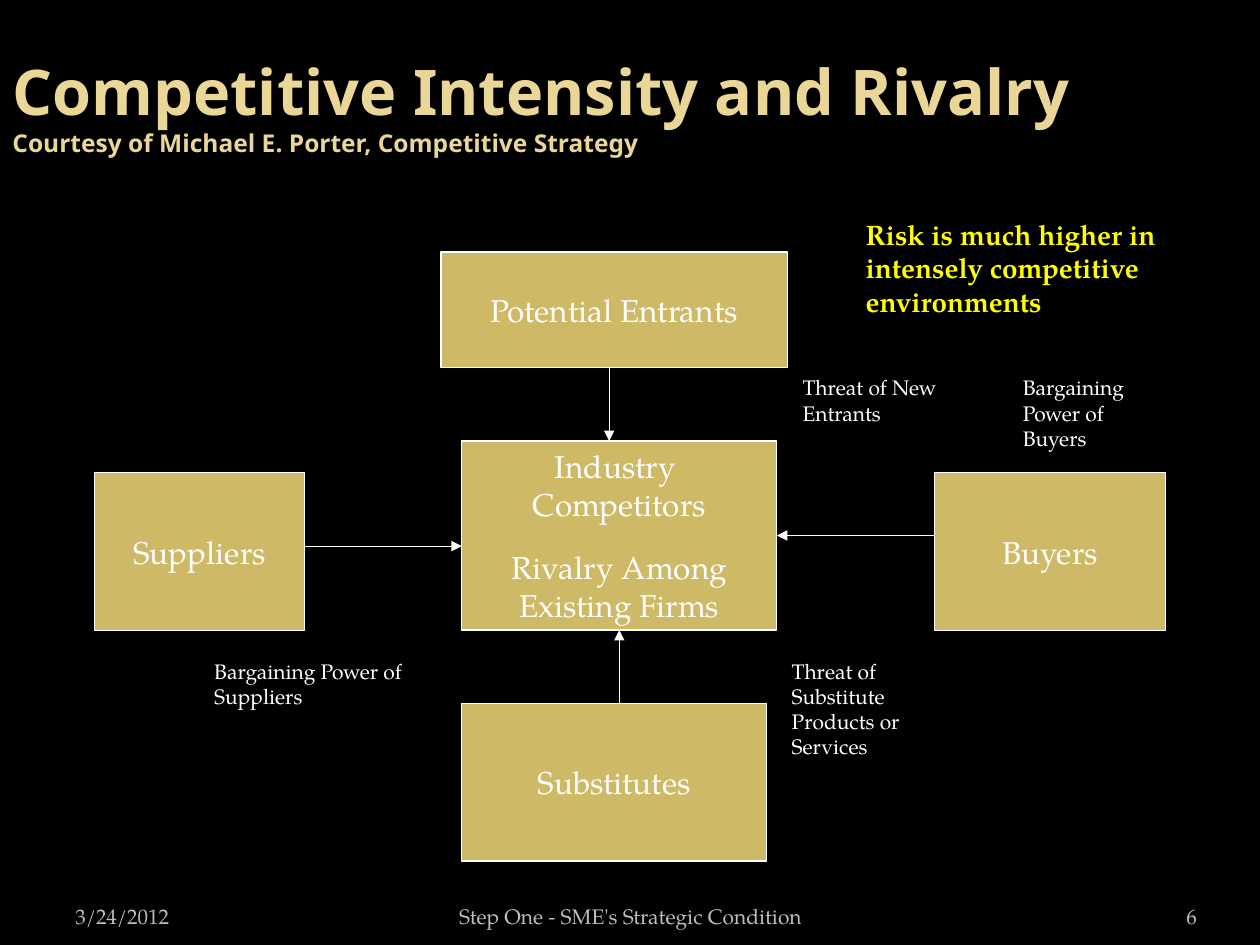
"""Build the competitive forces slide with its boxes, arrows and captions."""
from lxml import etree
from pptx import Presentation
from pptx.dml.color import RGBColor
from pptx.enum.shapes import MSO_CONNECTOR, MSO_SHAPE
from pptx.enum.text import MSO_ANCHOR, MSO_AUTO_SIZE, PP_ALIGN
from pptx.oxml.ns import qn
from pptx.util import Cm, Pt

BLACK = RGBColor(0x00, 0x00, 0x00)
WHITE = RGBColor(0xFF, 0xFF, 0xFF)
GREY = RGBColor(0xBD, 0xBD, 0xBD)
GOLD = RGBColor(0xCE, 0xB9, 0x66)
PALE_GOLD = RGBColor(0xEA, 0xD6, 0x96)
YELLOW = RGBColor(0xFF, 0xFF, 0x00)
HEADING_FONT, BODY_FONT = "Noto Sans", "TeX Gyre Pagella"
LEFT, CENTER, RIGHT = PP_ALIGN.LEFT, PP_ALIGN.CENTER, PP_ALIGN.RIGHT
TOP, MIDDLE, BOTTOM = MSO_ANCHOR.TOP, MSO_ANCHOR.MIDDLE, MSO_ANCHOR.BOTTOM
RECTANGLE, STRAIGHT = MSO_SHAPE.RECTANGLE, MSO_CONNECTOR.STRAIGHT
GROW = MSO_AUTO_SIZE.SHAPE_TO_FIT_TEXT
WIDE_INSETS = (0.3, 0.15)

TITLE = [
    ("Competitive Intensity and Rivalry", 36),
    ("Courtesy of Michael E. Porter, Competitive Strategy", 14),
]
FOOTERS = [
    ("3/24/2012", (1.27, 17.83, 5.92, 1.02), LEFT, (0.25, 0.13)),
    ("Step One - SME's Strategic Condition", (8.69, 17.83, 8.05, 1.02), CENTER, (0.25, 0.13)),
    ("6", (22.02, 17.83, 2.11, 1.02), RIGHT, (0, 0.13)),
]
FORCES = {
    "entrants": (["Potential Entrants"], (8.89, 5.08, 6.98, 2.33)),
    "substitutes": (["Substitutes"], (9.31, 14.18, 6.14, 3.18)),
    "suppliers": (["Suppliers"], (1.91, 9.53, 4.23, 3.18)),
    "buyers": (["Buyers"], (18.84, 9.53, 4.66, 3.18)),
    "rivalry": (
        ["Industry ", "Competitors", "Rivalry Among", "Existing Firms"],
        (9.31, 8.89, 6.35, 3.81),
    ),
}
GAP_BEFORE = {"Rivalry Among": 14.4}
CAPTIONS = [
    ("Bargaining Power of Suppliers", (4.02, 13.12, 4.87, 3.12), 12, WHITE, False),
    ("Bargaining Power of Buyers", (20.32, 7.41, 2.96, 1.85), 12, WHITE, False),
    ("Threat of New Entrants", (15.88, 7.41, 4.23, 1.32), 12, WHITE, False),
    ("Threat of Substitute Products or Services", (15.66, 13.12, 4.23, 1.32), 12, WHITE, False),
    ("Risk is much higher in intensely competitive environments",
     (17.15, 4.23, 7.2, 2.33), 16, YELLOW, True),
]


def write(frame, lines, font, color, bold, align):
    for index, (text, size) in enumerate(lines):
        paragraph = frame.paragraphs[0] if index == 0 else frame.add_paragraph()
        paragraph.alignment = align
        if text in GAP_BEFORE:
            paragraph.space_before = Pt(GAP_BEFORE[text])
        run = paragraph.add_run()
        run.text = text
        run.font.name, run.font.size, run.font.bold = font, Pt(size), bold
        run.font.color.rgb = color


def set_frame(frame, anchor, insets, wrap):
    frame.vertical_anchor, frame.word_wrap = anchor, wrap
    frame.margin_left = frame.margin_right = Cm(insets[0])
    frame.margin_top = frame.margin_bottom = Cm(insets[1])


def add_label(slide, text, place, size, color, bold, align, anchor, insets):
    frame = slide.shapes.add_textbox(*map(Cm, place)).text_frame
    set_frame(frame, anchor, insets, True)
    write(frame, [(text, size)], BODY_FONT, color, bold, align)
    return frame


def add_force(slide, lines, place):
    box = slide.shapes.add_shape(RECTANGLE, *map(Cm, place))
    box.shadow.inherit = False
    box.fill.solid()
    box.fill.fore_color.rgb = GOLD
    box.line.color.rgb = WHITE
    box.line.width = Pt(0.75)
    set_frame(box.text_frame, MIDDLE, WIDE_INSETS, False)
    write(box.text_frame, [(line, 18) for line in lines], BODY_FONT, WHITE, False, CENTER)
    return box


def add_arrow(slide, start, end):
    arrow = slide.shapes.add_connector(STRAIGHT, *start, *end)
    arrow.line.color.rgb = WHITE
    arrow.line.width = Pt(0.75)
    etree.SubElement(arrow.line._get_or_add_ln(), qn("a:tailEnd"), type="triangle")
    etree.SubElement(arrow._element.spPr, qn("a:effectLst"))
    return arrow


def main():
    presentation = Presentation()
    presentation.slide_width, presentation.slide_height = Cm(25.4), Cm(19.05)
    slide = presentation.slides.add_slide(presentation.slide_layouts[5])
    slide.background.fill.solid()
    slide.background.fill.fore_color.rgb = BLACK

    title = slide.shapes.title
    title.left, title.top, title.width, title.height = map(Cm, (0, 0, 25.4, 4.23))
    set_frame(title.text_frame, MIDDLE, (0.25, 0.13), True)
    write(title.text_frame, TITLE, HEADING_FONT, PALE_GOLD, True, LEFT)

    for text, place, align, insets in FOOTERS:
        add_label(slide, text, place, 12, GREY, False, align, BOTTOM, insets)

    boxes = {name: add_force(slide, *force) for name, force in FORCES.items()}
    rivalry = boxes["rivalry"]
    rivalry_right = rivalry.left + rivalry.width
    rivalry_bottom = rivalry.top + rivalry.height
    center_x = rivalry.left + rivalry.width // 2
    center_y = rivalry.top + rivalry.height // 2
    suppliers, entrants = boxes["suppliers"], boxes["entrants"]
    supply_y, entry_x = Cm(11.01), Cm(12.28)

    add_arrow(slide, (suppliers.left + suppliers.width, supply_y), (rivalry.left, supply_y))
    from_buyers = add_arrow(slide, (boxes["buyers"].left, center_y), (rivalry_right, center_y))
    from_buyers.end_connect(rivalry, 3)
    add_arrow(slide, (entry_x, entrants.top + entrants.height), (entry_x, rivalry.top))
    from_substitutes = add_arrow(
        slide, (center_x, boxes["substitutes"].top), (center_x, rivalry_bottom))
    from_substitutes.end_connect(rivalry, 2)

    for text, place, size, color, bold in CAPTIONS:
        frame = add_label(slide, text, place, size, color, bold, LEFT, TOP, WIDE_INSETS)
        frame.auto_size = GROW

    presentation.save("out.pptx")


if __name__ == "__main__":
    main()
